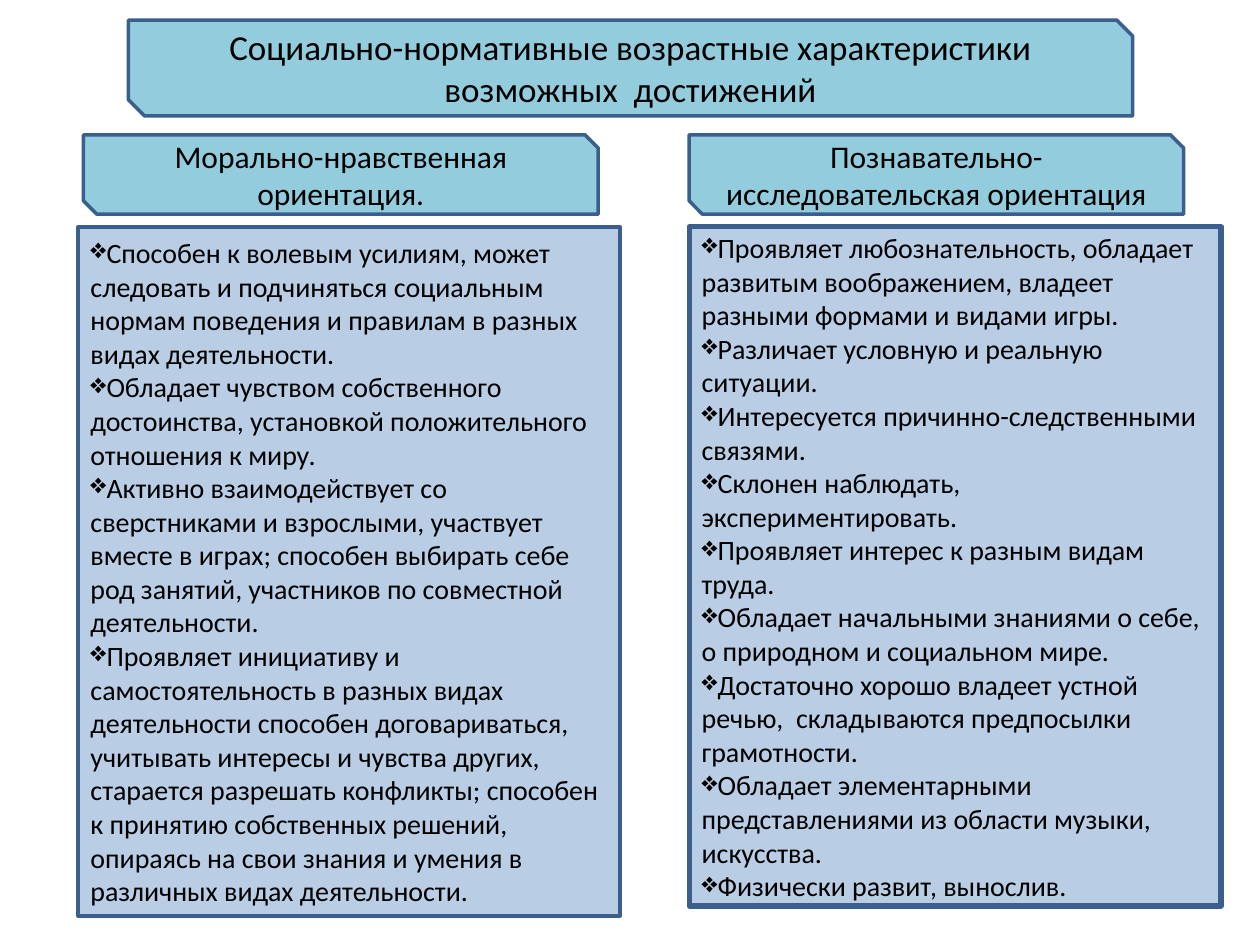
from collections import namedtuple
from dataclasses import dataclass

from lxml.etree import SubElement
from pptx import Presentation
from pptx.dml.color import RGBColor as RGB
from pptx.enum.shapes import MSO_SHAPE as SHAPE
from pptx.enum.text import MSO_ANCHOR as ANCHOR, PP_ALIGN as ALIGN
from pptx.oxml.ns import qn
from pptx.util import Inches, Pt

Box = namedtuple("Box", "x y w h")


@dataclass(frozen=True)
class Theme:
    """Colours, font and type sizes of the slide."""
    font: str = "Calibri"
    text: RGB = RGB(0, 0, 0)
    line: RGB = RGB(0x3A, 0x5F, 0x8C)
    banner: RGB = RGB(0x93, 0xCD, 0xDD)
    panel: RGB = RGB(0xB9, 0xCD, 0xE5)
    title: int = 20
    heading: int = 18
    body: int = 16


THEME = Theme()
COLS, ROWS = 100, 75
WIDTH, HEIGHT = Inches(10), Inches(7.5)
HEADING_ROWS, GAP_ROWS = 6.3, 1

TITLE = ["Социально-нормативные возрастные характеристики",
         "возможных  достижений"]

MORAL = [
    "Способен к волевым усилиям, может следовать и подчиняться социальным "
    "нормам поведения и правилам в разных видах деятельности.",
    "Обладает чувством собственного достоинства, установкой положительного "
    "отношения к миру.",
    "Активно взаимодействует со сверстниками и взрослыми, участвует вместе в "
    "играх; способен выбирать себе род занятий, участников по совместной "
    "деятельности.",
    "Проявляет инициативу и самостоятельность в разных видах деятельности "
    "способен договариваться, учитывать интересы и чувства других, старается "
    "разрешать конфликты; способен к принятию собственных решений, опираясь на "
    "свои знания и умения в различных видах деятельности.",
]

COGNITIVE = [
    "Проявляет любознательность, обладает развитым воображением, владеет "
    "разными формами и видами игры.",
    "Различает условную и реальную ситуации.",
    "Интересуется причинно-следственными связями.",
    "Склонен наблюдать, экспериментировать.",
    "Проявляет интерес к разным видам труда.",
    "Обладает начальными знаниями о себе, о природном и социальном мире.",
    "Достаточно хорошо владеет устной речью,  складываются предпосылки "
    "грамотности.",
    "Обладает элементарными представлениями из области музыки, искусства.",
    "Физически развит, вынослив.",
]


def add_bullet(p):
    """Give the paragraph a diamond bullet without an indent."""
    pPr = p._p.get_or_add_pPr()
    pPr.set("marL", "0")
    pPr.set("indent", "0")
    SubElement(pPr, qn("a:buChar")).set("char", "❖")


def add_block(s, kind, box, fill, lines, size, weight=2, bullets=False):
    """Draw one outlined shape with its paragraphs."""
    sp = s.shapes.add_shape(
        kind, int(WIDTH * box.x / COLS), int(HEIGHT * box.y / ROWS),
        int(WIDTH * box.w / COLS), int(HEIGHT * box.h / ROWS))
    sp.shadow.inherit = False
    sp.fill.solid()
    sp.fill.fore_color.rgb = fill
    sp.line.color.rgb = THEME.line
    sp.line.width = Pt(weight)
    tf = sp.text_frame
    for name, value in {"word_wrap": True, "vertical_anchor": ANCHOR.MIDDLE}.items():
        setattr(tf, name, value)
    for i, line in enumerate(lines):
        p = tf.add_paragraph() if i else tf.paragraphs[0]
        p.alignment = ALIGN.LEFT if bullets else ALIGN.CENTER
        if bullets:
            add_bullet(p)
        r = p.add_run()
        r.text = line
        for name, value in {"name": THEME.font, "size": Pt(size)}.items():
            setattr(r.font, name, value)
        r.font.color.rgb = THEME.text


def add_title(s, box):
    """Fill the box with the title banner."""
    add_block(s, SHAPE.SNIP_2_DIAG_RECTANGLE, box, THEME.banner, TITLE, THEME.title)


def add_column(s, box, heading, items, inset, share, weight):
    """Stack a heading banner over a bulleted panel inside the box."""
    head = Box(box.x + box.w * inset, box.y, box.w * share, HEADING_ROWS)
    drop = HEADING_ROWS + GAP_ROWS
    panel = Box(box.x, box.y + drop, box.w, box.h - drop)
    add_block(s, SHAPE.RECTANGLE, panel, THEME.panel, items, THEME.body,
              weight, bullets=True)
    add_block(s, SHAPE.SNIP_2_DIAG_RECTANGLE, head, THEME.banner, [heading],
              THEME.heading)


def main():
    """Build and save the slide."""
    prs = Presentation()
    prs.slide_width, prs.slide_height = WIDTH, HEIGHT
    s = prs.slides.add_slide(prs.slide_layouts[6])
    add_title(s, Box(10.2, 1.6, 79.7, 7.6))
    add_column(s, Box(6.2, 10.7, 43, 62), "Морально-нравственная ориентация.",
               MORAL, inset=0.01, share=0.95, weight=2)
    add_column(s, Box(54.7, 10.7, 42.2, 61.2),
               "Познавательно-исследовательская ориентация",
               COGNITIVE, inset=0, share=0.93, weight=3)
    prs.save("out.pptx")


if __name__ == "__main__":
    main()
